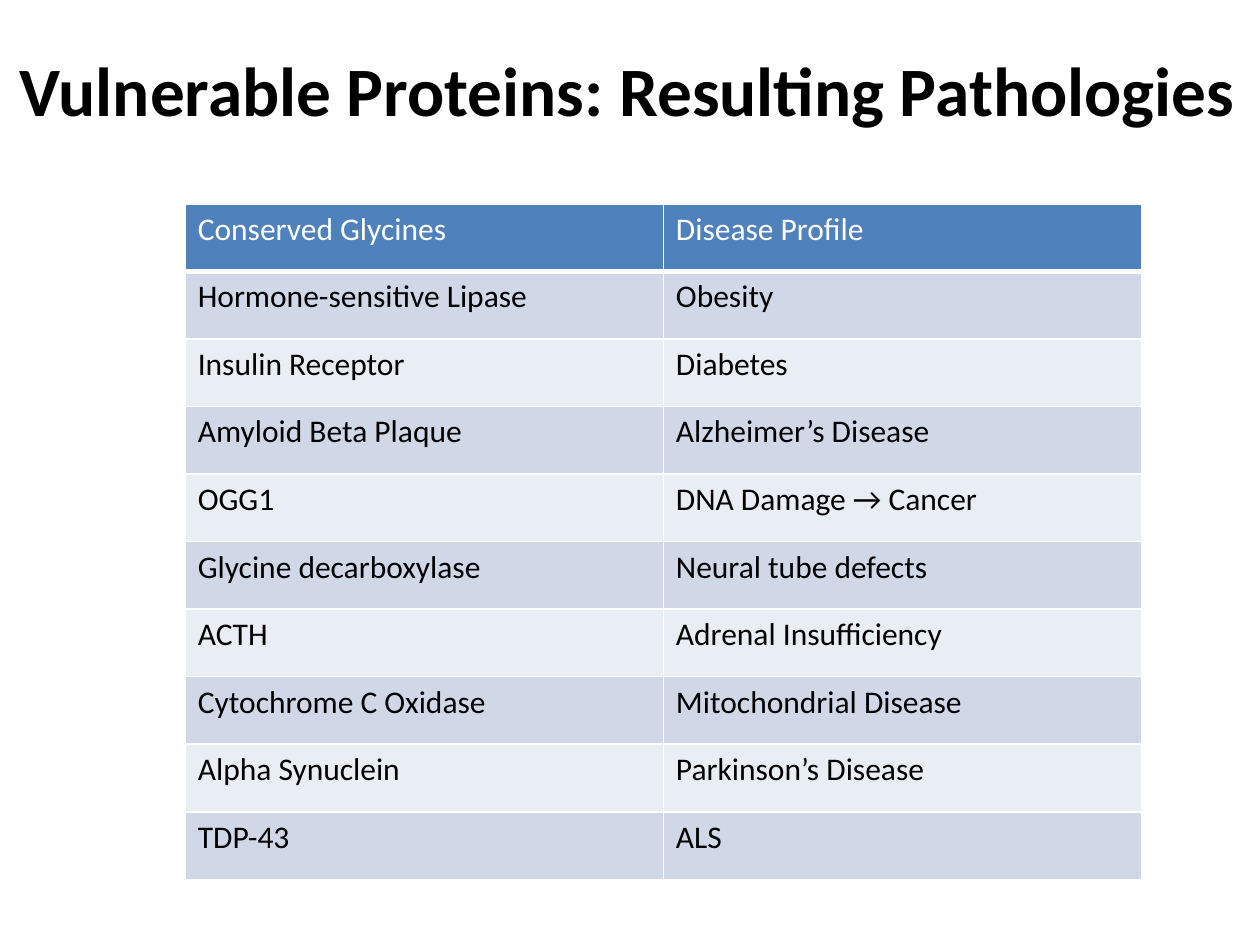
import pptx
import pptx.util
import pptx.dml.color
import pptx.enum.text
import pptx.oxml
import pptx.oxml.ns

Inches = pptx.util.Inches
Pt = pptx.util.Pt

COLORS = {
    "text": "000000",
    "header_text": "FFFFFF",
    "header": "4F81BD",
    "band_dark": "D0D8E8",
    "band_light": "E9EDF4",
    "border": "FFFFFF",
}

TITLE = "Vulnerable Proteins: Resulting Pathologies"
ROWS = [
    ("Conserved Glycines", "Disease Profile"),
    ("Hormone-sensitive Lipase", "Obesity"),
    ("Insulin Receptor", "Diabetes"),
    ("Amyloid Beta Plaque", "Alzheimer’s Disease"),
    ("OGG1", "DNA Damage → Cancer"),
    ("Glycine decarboxylase", "Neural tube defects"),
    ("ACTH", "Adrenal Insufficiency"),
    ("Cytochrome C Oxidase", "Mitochondrial Disease"),
    ("Alpha Synuclein", "Parkinson’s Disease"),
    ("TDP-43", "ALS"),
]


def rgb(name):
    return pptx.dml.color.RGBColor.from_string(COLORS[name])


def write_text(tf, text, color, **font):
    """Put one formatted run in the first paragraph."""
    p = tf.paragraphs[0]
    r = p.add_run()
    r.text = text
    r.font.color.rgb = rgb(color)
    for name, value in {"name": "Calibri", **font}.items():
        setattr(r.font, name, value)
    return p


def set_borders(cell, widths):
    """Draw the cell edges; widths maps L, R, T, B to points, in that order."""
    tcPr = cell._tc.get_or_add_tcPr()
    for i, (side, width) in enumerate(widths.items()):
        ln = pptx.oxml.parse_xml(
            f'<a:ln{side} {pptx.oxml.ns.nsdecls("a")} w="{Pt(width)}">'
            f'<a:solidFill><a:srgbClr val="{COLORS["border"]}"/></a:solidFill>'
            f'</a:ln{side}>'
        )
        tcPr.insert(i, ln)


def add_title(slide):
    sp = slide.shapes.title
    box = {"left": -0.15, "top": 0.08, "width": 10.26, "height": 1.25}
    for name, value in box.items():
        setattr(sp, name, Inches(value))
    tf = sp.text_frame
    tf.word_wrap = True
    tf.vertical_anchor = pptx.enum.text.MSO_ANCHOR.MIDDLE
    p = write_text(tf, TITLE, "text", size=Pt(39.6), bold=True)
    p.alignment = pptx.enum.text.PP_ALIGN.CENTER


def add_protein_table(slide):
    table = slide.shapes.add_table(
        len(ROWS), len(ROWS[0]),
        Inches(1.47), Inches(1.62), Inches(7.59), Inches(5.36),
    ).table
    for i, row in enumerate(ROWS):
        is_header = i == 0
        fill = "header" if is_header else ("band_light", "band_dark")[i % 2]
        color = "header_text" if is_header else "text"
        edges = {"L": 1, "R": 1, "T": 1, "B": 3 if is_header else 1}
        for j, text in enumerate(row):
            cell = table.cell(i, j)
            cell.fill.solid()
            cell.fill.fore_color.rgb = rgb(fill)
            write_text(cell.text_frame, text, color, size=Pt(18), bold=False)
            set_borders(cell, edges)


def main():
    prs = pptx.Presentation()
    prs.slide_width = Inches(10)
    prs.slide_height = Inches(7.5)
    # Title Only layout
    slide = prs.slides.add_slide(prs.slide_layouts[5])
    add_title(slide)
    add_protein_table(slide)
    prs.save("out.pptx")


if __name__ == "__main__":
    main()
